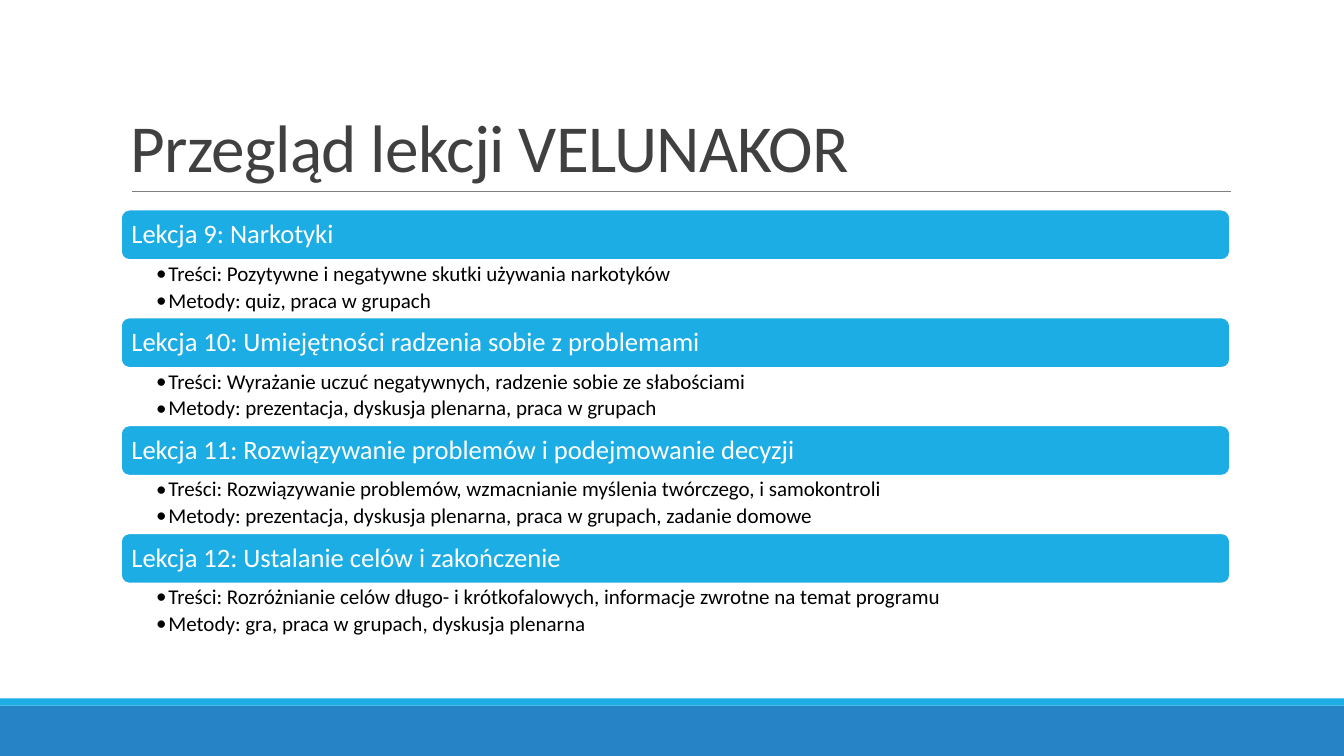
"""Build the slide that reviews VELUNAKOR lessons 9 to 12."""
from typing import NamedTuple

from lxml import etree
from pptx import Presentation
from pptx.dml.color import RGBColor
from pptx.enum.shapes import MSO_CONNECTOR, MSO_SHAPE
from pptx.enum.text import MSO_ANCHOR, PP_ALIGN
from pptx.oxml.ns import qn
from pptx.util import Inches, Pt

RECTANGLE = MSO_SHAPE.RECTANGLE
ROUNDED = MSO_SHAPE.ROUNDED_RECTANGLE
STRAIGHT = MSO_CONNECTOR.STRAIGHT
TOP, MIDDLE, BOTTOM = MSO_ANCHOR.TOP, MSO_ANCHOR.MIDDLE, MSO_ANCHOR.BOTTOM
LEFT = PP_ALIGN.LEFT

FONT = "Calibri"
WHITE, BLACK, GREY, TITLE_GREY = "FFFFFF", "000000", "808080", "404040"
SKY, BLUE = "1CADE4", "2683C6"
SLIDE_WIDTH, SLIDE_HEIGHT = 13.33, 7.5
CONTENT_LEFT, CONTENT_WIDTH = 1.2, 11
FIRST_LESSON_TOP, LESSON_PITCH = 2.08, 1.07
HEADING_HEIGHT, DETAILS_HEIGHT = 0.5, 0.57


class Box(NamedTuple):
    left: float
    top: float
    width: float
    height: float


class TextStyle(NamedTuple):
    size: float
    color: str
    anchor: MSO_ANCHOR
    insets: tuple[float, float, float, float]
    line_spacing: float = 0.9
    space_after: float = 0
    bullet: str = ""
    indent: float = 0
    letter_spacing: float = 0


class Band(NamedTuple):
    box: Box
    color: str


class Lesson(NamedTuple):
    heading: str
    details: list[str]


TITLE_STYLE = TextStyle(48, TITLE_GREY, BOTTOM, (0.1, 0.05, 0.1, 0.05),
                        line_spacing=0.85, letter_spacing=-0.5)
HEADING_STYLE = TextStyle(19, WHITE, MIDDLE, (0.08, 0.05, 0.08, 0.05))
DETAILS_STYLE = TextStyle(15, BLACK, TOP, (0.35, 0.03, 0.15, 0.03),
                          space_after=3, bullet="•", indent=0.12)

BANDS = [
    Band(Box(0, 7, SLIDE_WIDTH, 0.5), BLUE),
    Band(Box(0, 6.93, SLIDE_WIDTH, 0.07), SKY),
]
LESSONS = [
    Lesson("Lekcja 9: Narkotyki", [
        "Treści: Pozytywne i negatywne skutki używania narkotyków",
        "Metody: quiz, praca w grupach",
    ]),
    Lesson("Lekcja 10: Umiejętności radzenia sobie z problemami", [
        "Treści: Wyrażanie uczuć negatywnych, radzenie sobie ze słabościami",
        "Metody: prezentacja, dyskusja plenarna, praca w grupach",
    ]),
    Lesson("Lekcja 11: Rozwiązywanie problemów i podejmowanie decyzji", [
        "Treści: Rozwiązywanie problemów, wzmacnianie myślenia twórczego, i samokontroli",
        "Metody: prezentacja, dyskusja plenarna, praca w grupach, zadanie domowe",
    ]),
    Lesson("Lekcja 12: Ustalanie celów i zakończenie", [
        "Treści: Rozróżnianie celów długo- i krótkofalowych, informacje zwrotne na temat programu",
        "Metody: gra, praca w grupach, dyskusja plenarna",
    ]),
]


def rgb(color: str) -> RGBColor:
    return RGBColor.from_string(color)


def set_attributes(target, values: dict) -> None:
    for name, value in values.items():
        setattr(target, name, value)


def add_bullet(paragraph, style: TextStyle) -> None:
    properties = paragraph._p.get_or_add_pPr()
    properties.set("marL", str(Inches(style.indent)))
    properties.set("indent", str(-Inches(style.indent)))
    etree.SubElement(properties, qn("a:buFont")).set("typeface", FONT)
    etree.SubElement(properties, qn("a:buChar")).set("char", style.bullet)


def write_text(shape, lines: list[str], style: TextStyle) -> None:
    frame = shape.text_frame
    left, top, right, bottom = map(Inches, style.insets)
    set_attributes(frame, {
        "word_wrap": True, "vertical_anchor": style.anchor,
        "margin_left": left, "margin_top": top,
        "margin_right": right, "margin_bottom": bottom,
    })
    for index, line in enumerate(lines):
        paragraph = frame.add_paragraph() if index else frame.paragraphs[0]
        set_attributes(paragraph, {
            "alignment": LEFT, "line_spacing": style.line_spacing,
            "space_before": Pt(0), "space_after": Pt(style.space_after),
        })
        if style.bullet:
            add_bullet(paragraph, style)
        run = paragraph.add_run()
        run.text = line
        set_attributes(run.font, {"name": FONT, "size": Pt(style.size)})
        run.font.color.rgb = rgb(style.color)
        if style.letter_spacing:
            run._r.get_or_add_rPr().set("spc", str(int(style.letter_spacing * 100)))


def add_filled_shape(slide, kind: MSO_SHAPE, box: Box, color: str):
    shape = slide.shapes.add_shape(kind, *map(Inches, box))
    shape.shadow.inherit = False
    shape.fill.solid()
    shape.fill.fore_color.rgb = rgb(color)
    shape.line.fill.background()
    return shape


def add_text_box(slide, box: Box, lines: list[str], style: TextStyle) -> None:
    write_text(slide.shapes.add_textbox(*map(Inches, box)), lines, style)


def add_title_rule(slide) -> None:
    ends = map(Inches, (1.31, 1.9, 12.21, 1.9))
    connector = slide.shapes.add_connector(STRAIGHT, *ends)
    connector.line.color.rgb = rgb(GREY)
    connector.line.width = Pt(0.5)
    etree.SubElement(connector._element.spPr, qn("a:effectLst"))


def add_lesson(slide, lesson: Lesson, top: float) -> None:
    heading_box = Box(CONTENT_LEFT, top, CONTENT_WIDTH, HEADING_HEIGHT)
    heading = add_filled_shape(slide, ROUNDED, heading_box, SKY)
    heading.line.color.rgb = rgb(WHITE)
    heading.line.width = Pt(1.25)
    write_text(heading, [lesson.heading], HEADING_STYLE)
    details_box = Box(CONTENT_LEFT, top + HEADING_HEIGHT, CONTENT_WIDTH, DETAILS_HEIGHT)
    add_text_box(slide, details_box, lesson.details, DETAILS_STYLE)


def main() -> None:
    presentation = Presentation()
    set_attributes(presentation, {
        "slide_width": Inches(SLIDE_WIDTH), "slide_height": Inches(SLIDE_HEIGHT),
    })
    slide = presentation.slides.add_slide(presentation.slide_layouts[6])
    for band in BANDS:
        add_filled_shape(slide, RECTANGLE, band.box, band.color)
    add_title_rule(slide)
    title_box = Box(CONTENT_LEFT, 0.31, CONTENT_WIDTH, 1.59)
    add_text_box(slide, title_box, ["Przegląd lekcji VELUNAKOR"], TITLE_STYLE)
    for index, lesson in enumerate(LESSONS):
        add_lesson(slide, lesson, FIRST_LESSON_TOP + index * LESSON_PITCH)
    presentation.save("out.pptx")


if __name__ == "__main__":
    main()
